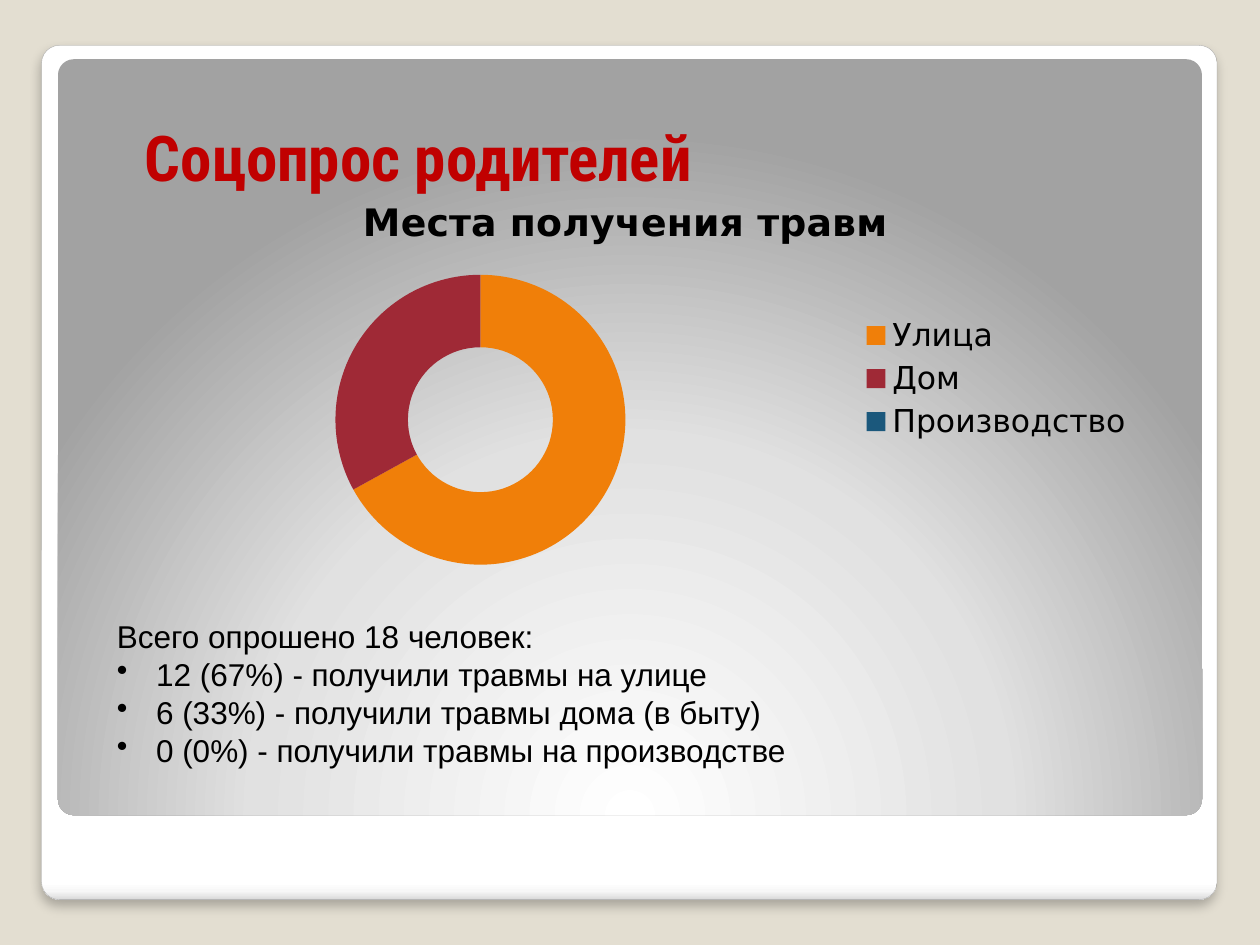
from dataclasses import dataclass
from lxml import etree
from pptx import Presentation, util as u
from pptx.chart.data import CategoryChartData
from pptx.dml.color import RGBColor
from pptx.enum import chart as ch, shapes, text
from pptx.oxml import parse_xml
from pptx.oxml.ns import nsdecls, qn


@dataclass(frozen=True)
class Theme:
    back: str = "E3DED1"
    edge: str = "A4A4A4"
    title: str = "C00000"
    ink: str = "000000"
    head: str = "Roboto Condensed"
    body: str = "Arial"
    data: str = "DejaVu Sans"
    big: float = 36
    mid: float = 21.6
    base: float = 18


T = Theme()
WIDE, HIGH = 10, 7.5
LEFT = 0.83
TITLE = "Соцопрос родителей"
TOPIC = "Места получения травм"
PLACES = [("Улица", 67, "F07F09"), ("Дом", 33, "9F2936"), ("Производство", 0, "1B587C")]
LEAD = "Всего опрошено 18 человек:"
ITEMS = [
    "12 (67%) - получили травмы на улице",
    "6 (33%) - получили травмы дома (в быту)",
    "0 (0%) - получили травмы на производстве",
]
LINEAR = '<a:lin ang="5400000" scaled="0"/>'
RADIAL = ('<a:path path="circle"><a:fillToRect l="50000" t="175000" '
          'r="50000" b="-75000"/></a:path>')
CARDS = [
    ((0.33, 0.36, 9.33, 6.78),
     [(0, "FFFFFF"), (98, "FFFFFF"), (99, "F7F7F7"), (100, "DADADA")], LINEAR),
    ((0.46, 0.47, 9.08, 6), [(0, "FFFFFF"), (55, "E1E1E1"), (100, "A2A2A2")], RADIAL),
]


def color(code):
    return RGBColor.from_string(code)


def box(area):
    return [u.Inches(n) for n in area]


def style(font, name, size, code, bold=False):
    font.name, font.size, font.bold = name, u.Pt(size), bold
    font.color.rgb = color(code)


def add_card(slide, area, stops, shade):
    card = slide.shapes.add_shape(shapes.MSO_SHAPE.ROUNDED_RECTANGLE, *box(area))
    card.adjustments[0] = 0.021
    card.shadow.inherit = False
    card.line.fill.background()
    marks = "".join(f'<a:gs pos="{pos * 1000}"><a:srgbClr val="{code}"/></a:gs>'
                    for pos, code in stops)
    grad = parse_xml(f'<a:gradFill {nsdecls("a")} rotWithShape="1">'
                     f'<a:gsLst>{marks}</a:gsLst>{shade}</a:gradFill>')
    card._element.spPr.find(qn("a:prstGeom")).addnext(grad)
    return card


def add_edge(card):
    card.line.color.rgb = color(T.edge)
    card.line.width = u.Pt(0.16)
    glow = card._element.spPr.find(qn("a:effectLst"))
    glow.append(parse_xml(
        f'<a:outerShdw {nsdecls("a")} blurRad="{u.Pt(6)}" dist="{u.Pt(4)}" '
        f'dir="5400000" algn="t" rotWithShape="0"><a:srgbClr val="{T.ink}">'
        '<a:alpha val="25000"/></a:srgbClr></a:outerShdw>'))


def set_title(slide):
    title = slide.shapes.title
    slide.shapes._spTree.append(title._element)
    title.left, title.top, title.width, title.height = box((1.05, 0.44, 8.95, 1.15))
    title.text_frame.text = TITLE
    title.text_frame.vertical_anchor = text.MSO_ANCHOR.BOTTOM
    para = title.text_frame.paragraphs[0]
    para.alignment = text.PP_ALIGN.LEFT
    style(para.font, T.head, T.big, T.title, True)


def add_ring(slide):
    data = CategoryChartData()
    data.categories = [name for name, _, _ in PLACES]
    data.add_series(TOPIC, [share for _, share, _ in PLACES])
    chart = slide.shapes.add_chart(
        ch.XL_CHART_TYPE.DOUGHNUT, *box((LEFT, 1.39, 8.27, 3.23)), data).chart
    style(chart.font, T.data, T.base, T.ink)
    chart.has_title = True
    chart.chart_title.text_frame.text = TOPIC
    chart.chart_title.include_in_layout = False
    style(chart.chart_title.text_frame.paragraphs[0].font, T.data, T.mid, T.ink, True)
    chart.has_legend = True
    chart.legend.position = ch.XL_LEGEND_POSITION.RIGHT
    chart.legend.include_in_layout = False
    plot = chart.plots[0]
    plot.vary_by_categories = True
    for i, (_, _, code) in enumerate(PLACES):
        fill = plot.series[0].points[i].format.fill
        fill.solid()
        fill.fore_color.rgb = color(code)


def add_notes(slide):
    frame = slide.shapes.add_textbox(*box((LEFT, 4.85, 5.91, 1.62))).text_frame
    frame.word_wrap = True
    frame.auto_size = text.MSO_AUTO_SIZE.SHAPE_TO_FIT_TEXT
    frame.text = "\n".join([LEAD, *ITEMS])
    for i, para in enumerate(frame.paragraphs):
        style(para.font, T.body, T.base, T.ink)
        if i:
            props = para._p.get_or_add_pPr()
            dent = u.Inches(0.31)
            props.set("marL", str(dent))
            props.set("indent", str(-dent))
            mark = etree.Element(qn("a:buChar"), char="•")
            props.insert(0, mark)


def main():
    deck = Presentation()
    deck.slide_width, deck.slide_height = u.Inches(WIDE), u.Inches(HIGH)
    slide = deck.slides.add_slide(deck.slide_layouts[5])
    slide.background.fill.solid()
    slide.background.fill.fore_color.rgb = color(T.back)
    cards = [add_card(slide, *card) for card in CARDS]
    add_edge(cards[0])
    set_title(slide)
    add_ring(slide)
    add_notes(slide)
    deck.save("out.pptx")


if __name__ == "__main__":
    main()
